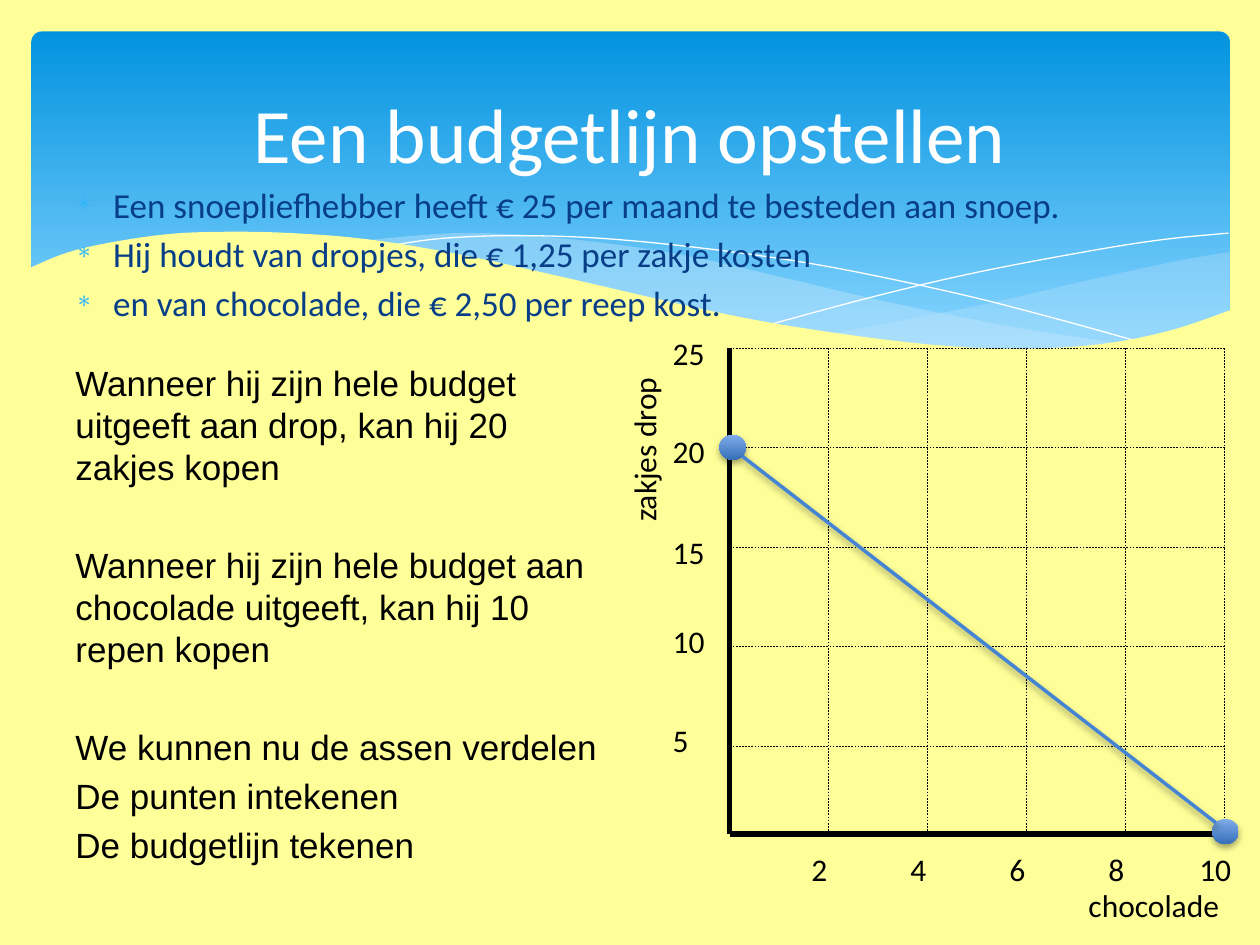
from lxml import etree
from pptx import Presentation
from pptx.dml.color import RGBColor
from pptx.enum.dml import MSO_LINE
from pptx.enum.shapes import MSO_CONNECTOR, MSO_SHAPE
from pptx.enum.text import MSO_ANCHOR, PP_ALIGN
from pptx.oxml.ns import qn
from pptx.util import Inches, Pt

DASH = MSO_LINE.DASH
LINE = MSO_CONNECTOR.STRAIGHT
ROUND, OVAL = MSO_SHAPE.ROUNDED_RECTANGLE, MSO_SHAPE.OVAL
LEFT, CENTER = PP_ALIGN.LEFT, PP_ALIGN.CENTER
TOP, MIDDLE = MSO_ANCHOR.TOP, MSO_ANCHOR.MIDDLE

COLORS = {
    "paper": "FFFF99", "sky": "0293E0", "pale": "83D3FE", "wave": "C6E7FC",
    "white": "FFFFFF", "navy": "073E87", "bullet": "31B6FD", "black": "000000",
    "light": "80ACEA", "deep": "3570BA", "budget": "4584D3",
}

TITLE = "Een budgetlijn opstellen"
FACTS = [
    "Een snoepliefhebber heeft € 25 per maand te besteden aan snoep.",
    "Hij houdt van dropjes, die € 1,25 per zakje kosten",
    "en van chocolade, die € 2,50 per reep kost.",
]
# Text and the space before it, in points
STEPS = [
    ("Wanneer hij zijn hele budget uitgeeft aan drop, kan hij 20 zakjes kopen", 4),
    ("Wanneer hij zijn hele budget aan chocolade uitgeeft, kan hij 10 repen kopen", 32),
    ("We kunnen nu de assen verdelen", 32),
    ("De punten intekenen", 4),
    ("De budgetlijn tekenen", 4),
]
BARS = ["2", "4", "6", "8", "10"]
BAGS = [("25", 2.6), ("20", 3.38), ("15", 4.18), ("10", 4.89), ("5", 5.67)]
X0, X1, Y0, Y1, STEP = 5.79, 9.72, 2.76, 6.62, 0.79

# Each wave: runs of points, every run a smooth curve; fill and opacity
WAVES = [
    ([[(9.76, 2), (9.35, 2.07), (8.61, 2.23), (7.79, 2.42), (6.61, 2.65)],
      [(6.61, 2.65), (7.05, 2.71), (7.57, 2.76), (8.14, 2.78), (8.63, 2.75),
       (9.13, 2.67), (9.49, 2.57), (9.76, 2.47)]], "wave", 29),
    ([[(8.93, 2.73), (8.07, 2.6), (7.06, 2.4), (6.29, 2.22), (5.55, 2.05),
       (4.89, 1.94), (4.2, 1.87), (3.61, 1.85), (2.86, 1.91)],
      [(2.86, 1.91), (3.62, 2.03), (4.49, 2.22), (5.3, 2.4), (6.18, 2.58),
       (6.95, 2.7), (7.61, 2.77), (8.18, 2.78), (8.93, 2.73)]], "wave", 40),
    ([[(3.09, 1.95), (3.53, 1.89), (4.16, 1.87), (4.89, 1.9), (5.82, 2),
       (6.65, 2.13), (7.6, 2.33), (8.31, 2.51), (9.07, 2.72)]], None, 100),
    ([[(6.13, 2.57), (6.95, 2.35), (7.76, 2.16), (8.66, 1.99), (9.24, 1.9),
       (9.75, 1.85)]], None, 100),
    ([[(9.77, 2.46), (9.3, 2.62), (8.75, 2.73), (8.09, 2.77), (7.44, 2.74),
       (6.68, 2.65), (5.79, 2.5), (4.47, 2.2), (3.65, 2.02), (2.92, 1.9),
       (2.3, 1.85), (1.77, 1.84), (1.32, 1.86), (0.85, 1.93), (0.52, 2.01),
       (0.23, 2.13)],
      [(0.23, 3.29), (9.77, 3.29)]], "paper", 100),
]

prs = Presentation()
prs.slide_width, prs.slide_height = Inches(10), Inches(7.5)
slide = prs.slides.add_slide(prs.slide_layouts[6])
shapes = slide.shapes


def rgb(name):
    return RGBColor.from_string(COLORS[name])


def add(parent, tag, **attrs):
    node = etree.SubElement(parent, qn(tag))
    for key, value in attrs.items():
        node.set(key, str(value))
    return node


def cast(shape, soft=False):
    """Drop the theme's shadow; a soft one takes its place if asked."""
    props = shape._element.spPr
    list_ = props.find(qn("a:effectLst"))
    if list_ is None:
        list_ = add(props, "a:effectLst")
    if soft:
        shade = add(list_, "a:outerShdw", blurRad=Pt(4), dist=Pt(2),
                    dir=5400000, rotWithShape=0)
        color = add(shade, "a:srgbClr", val=COLORS["black"])
        add(color, "a:alpha", val=38000)


def blend(kind, box, start, end, stop):
    """Add a shape filled with a gradient from top to bottom."""
    shape = shapes.add_shape(kind, *map(Inches, box))
    shape.shadow.inherit = False
    shape.line.fill.background()
    shape.fill.gradient()
    shape.fill.gradient_angle = 270
    for part, name, at in zip(shape.fill.gradient_stops, (start, end), (0, stop)):
        part.color.rgb, part.position = rgb(name), at
    return shape


def smooth(points, parts=6):
    """Catmull-Rom curve through the points."""
    if len(points) < 3:
        return points
    ends = [points[0], *points, points[-1]]
    curve = [points[0]]
    for quad in zip(ends, ends[1:], ends[2:], ends[3:]):
        for t in (n / parts for n in range(1, parts + 1)):
            curve.append(tuple(
                (2 * b + (c - a) * t + (2 * a - 5 * b + 4 * c - d) * t ** 2
                 + (3 * b - a - 3 * c + d) * t ** 3) / 2
                for a, b, c, d in zip(*quad)))
    return curve


def wave(runs, fill, alpha):
    points = [tuple(map(Inches, point)) for run in runs for point in smooth(run)]
    pen = shapes.build_freeform(*points[0])
    pen.add_line_segments(points[1:], close=bool(fill))
    shape = pen.convert_to_shape()
    shape.shadow.inherit = False
    if not fill:
        shape.fill.background()
        shape.line.color.rgb, shape.line.width = rgb("white"), Pt(0)
        return
    shape.line.fill.background()
    shape.fill.solid()
    shape.fill.fore_color.rgb = rgb(fill)
    if alpha < 100:
        color = shape._element.spPr.find(qn("a:solidFill"))[0]
        add(color, "a:alpha", val=alpha * 1000)


def line(start, end, color="black", width=0.25, dash=None, soft=False):
    link = shapes.add_connector(LINE, *map(Inches, (*start, *end)))
    link.line.color.rgb, link.line.width = rgb(color), Pt(width)
    if dash:
        link.line.dash_style = dash
    cast(link, soft)


def write(items, box, size=18, font="Calibri", color="black", align=LEFT,
          anchor=TOP, wrap=True, bullet=None, turn=0):
    """Add a text box; items are pairs of text and space before."""
    shape = shapes.add_textbox(*map(Inches, box))
    shape.rotation = turn
    frame = shape.text_frame
    frame.word_wrap, frame.vertical_anchor = wrap, anchor
    for n, (text, gap) in enumerate(items):
        para = frame.add_paragraph() if n else frame.paragraphs[0]
        para.alignment, para.space_before = align, Pt(gap)
        run = para.add_run()
        run.text = text
        run.font.size, run.font.name = Pt(size), font
        run.font.color.rgb = rgb(color)
        if bullet:
            props = para._p.get_or_add_pPr()
            props.set("marL", str(Inches(0.3)))
            props.set("indent", str(-Inches(0.3)))
            add(add(props, "a:buClr"), "a:srgbClr", val=COLORS["bullet"])
            add(props, "a:buSzPct", val=70000)
            add(props, "a:buChar", char=bullet)


slide.background.fill.solid()
slide.background.fill.fore_color.rgb = rgb("paper")
banner = blend(ROUND, (0.25, 0.25, 9.51, 2.7), "sky", "pale", 0.9)
banner.adjustments[0] = 0.03
for item in WAVES:
    wave(*item)

write([(fact, 4) for fact in FACTS], (0.5, 1.41, 9, 1.32), size=20,
      color="navy", bullet="∗")
write([(TITLE, 0)], (0.5, 0.37, 9, 1.37), size=44, color="white",
      align=CENTER, anchor=MIDDLE)

line((X0, Y0), (X0, Y1), width=3)
line((X1, Y1), (X0, Y1), width=3)
for n, (bars, (bags, top)) in enumerate(zip(BARS, BAGS)):
    x, y = X0 + (n + 1) * (X1 - X0) / len(BARS), Y0 + n * STEP
    line((X0, y), (X1, y), dash=DASH)
    line((x, Y0), (x, Y1), dash=DASH)
    wide = 0.2 + 0.13 * len(bars)
    write([(bars, 0)], (x - 0.07 - wide / 2, 6.7, wide, 0.4), wrap=False)
    write([(bags, 0)], (5.24, top, 0.2 + 0.13 * len(bags), 0.4), wrap=False)
write([("chocolade", 0)], (8.54, 6.98, 1.25, 0.4), wrap=False)
write([("zakjes drop", 0)], (4.43, 3.36, 1.36, 0.4), wrap=False, turn=270)

write(STEPS, (0.5, 2.82, 4.41, 4.36), size=20, font="Arial")
for left, top in [(5.71, 3.45), (9.62, 6.5)]:
    cast(blend(OVAL, (left, top, 0.21, 0.2), "light", "deep", 1), soft=True)
line((5.89, 3.62), (9.65, 6.53), color="budget", width=2, soft=True)

prs.save("out.pptx")
